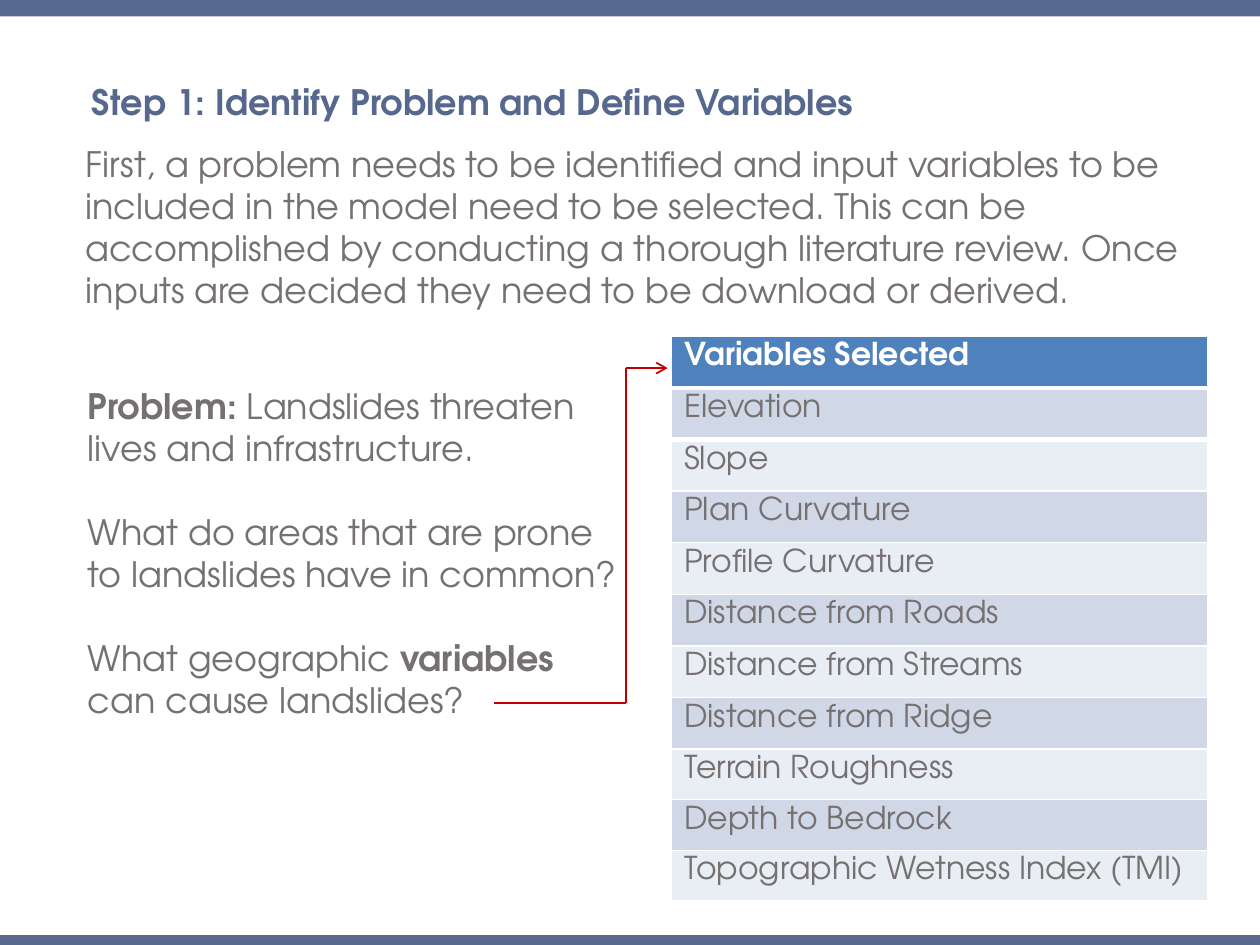
from pptx import Presentation
from pptx import util as u
from pptx.dml.color import RGBColor
from pptx.enum import shapes, text
from pptx.oxml.ns import qn
from lxml import etree

FONT = "TeX Gyre Adventor"
COLORS = {
    "bar": "57688F", "body": "767171", "white": "FFFFFF", "arrow": "C00000",
    "header": "4F81BD", "odd": "D0D8E8", "even": "E9EDF4",
}
WIDTH, HEIGHT = 25.4, 19.05

INTRO = [[("First, a problem needs to be identified and input variables to be "
           "included in the model need to be selected. This can be accomplished "
           "by conducting a thorough literature review. Once inputs are decided "
           "they need to be download or derived.", False)]]
QUESTIONS = [
    [("Problem:", True), (" Landslides threaten lives and infrastructure.", False)],
    [("What do areas that are prone to landslides have in common?", False)],
    [("What geographic ", False), ("variables ", True), ("can cause landslides?", False)],
]
VARIABLES = [
    "Variables Selected", "Elevation", "Slope", "Plan Curvature",
    "Profile Curvature", "Distance from Roads", "Distance from Streams",
    "Distance from Ridge", "Terrain Roughness", "Depth to Bedrock",
    "Topographic Wetness Index (TMI)",
]


def rgb(name):
    return RGBColor.from_string(COLORS[name])


def cm(*lengths):
    return [u.Cm(n) for n in lengths]


def add_run(p, words, color="body", **fmt):
    r = p.add_run()
    r.text = words
    for key, value in {"name": FONT, "size": u.Pt(20), "bold": False, **fmt}.items():
        setattr(r.font, key, value)
    r.font.color.rgb = rgb(color)


def add_bar(s, box):
    bar = s.shapes.add_shape(shapes.MSO_SHAPE.RECTANGLE, *cm(*box))
    bar.shadow.inherit = False
    bar.fill.solid()
    bar.fill.fore_color.rgb = rgb("bar")
    bar.line.fill.background()


def add_title(s, box, words):
    sp = s.shapes.title
    sp.left, sp.top, sp.width, sp.height = cm(*box)
    tf = sp.text_frame
    for key, value in {"word_wrap": True, "auto_size": text.MSO_AUTO_SIZE.NONE,
                       "vertical_anchor": text.MSO_ANCHOR.TOP}.items():
        setattr(tf, key, value)
    p = tf.paragraphs[0]
    for key, value in {"alignment": text.PP_ALIGN.LEFT, "line_spacing": 0.9,
                       "space_before": u.Pt(10)}.items():
        setattr(p, key, value)
    add_run(p, words, "bar", bold=True)


def add_text(s, box, paragraphs, gap=0):
    tf = s.shapes.add_textbox(*cm(*box)).text_frame
    tf.word_wrap = True
    tf.auto_size = text.MSO_AUTO_SIZE.SHAPE_TO_FIT_TEXT
    for i, runs in enumerate(paragraphs):
        p = tf.add_paragraph() if i else tf.paragraphs[0]
        p.space_before = u.Pt(gap if i else 0)
        for words, bold in runs:
            add_run(p, words, bold=bold)


def add_border(cell, side, width):
    """Draw one white cell border; borders come before the fill."""
    ln = etree.Element(qn("a:" + side), w=str(u.Pt(width)))
    fill = etree.SubElement(ln, qn("a:solidFill"))
    etree.SubElement(fill, qn("a:srgbClr"), val=COLORS["white"])
    cell._tc.get_or_add_tcPr().insert(0, ln)


def add_variables(s, box, names):
    table = s.shapes.add_table(len(names), 1, *cm(*box)).table
    for i, name in enumerate(names):
        # The last three rows are slightly lower
        table.rows[i].height = u.Cm(1.04 if i < len(names) - 3 else 1.02)
        cell = table.cell(i, 0)
        cell.vertical_anchor = text.MSO_ANCHOR.TOP
        cell.fill.solid()
        cell.fill.fore_color.rgb = rgb("header" if i == 0 else "odd" if i % 2 else "even")
        add_run(cell.text_frame.paragraphs[0], name, "body" if i else "white",
                size=u.Pt(18), bold=i == 0)
    # Thick rule below the header
    add_border(table.cell(0, 0), "lnB", 3)
    add_border(table.cell(1, 0), "lnT", 3)


def add_arrow(s, box, bend):
    """Run from the lower left of the box, up at the bend, to its upper right."""
    left, top, width, height = box
    points = [(left, top + height), (left + bend, top + height),
              (left + bend, top), (left + width, top)]
    for start, end in zip(points, points[1:]):
        line = s.shapes.add_connector(shapes.MSO_CONNECTOR.STRAIGHT, *cm(*start, *end))
        line.line.color.rgb = rgb("arrow")
        line.line.width = u.Pt(1)
        etree.SubElement(line._element.spPr, qn("a:effectLst"))
    # Only the last segment has a head
    etree.SubElement(line.line._get_or_add_ln(), qn("a:tailEnd"), type="arrow")


def main():
    prs = Presentation()
    prs.slide_width, prs.slide_height = cm(WIDTH, HEIGHT)
    s = prs.slides.add_slide(prs.slide_layouts[5])

    # Frame bars
    add_bar(s, (0, 0, WIDTH, 0.33))
    add_bar(s, (0, HEIGHT - 0.2, WIDTH, 0.2))

    # Heading and introduction
    add_title(s, (1.6, 1.6, 22.96, 1.14), "Step 1: Identify Problem and Define Variables")
    add_text(s, (1.47, 2.74, 22.86, 3.68), INTRO)

    # Questions leading to the selected variables
    add_variables(s, (13.54, 6.78, 10.8, 11.38), VARIABLES)
    add_text(s, (1.52, 7.62, 11.23, 7.09), QUESTIONS, gap=24)
    add_arrow(s, (9.96, 7.42, 3.5, 6.75), bend=2.66)

    prs.save("out.pptx")


if __name__ == "__main__":
    main()
